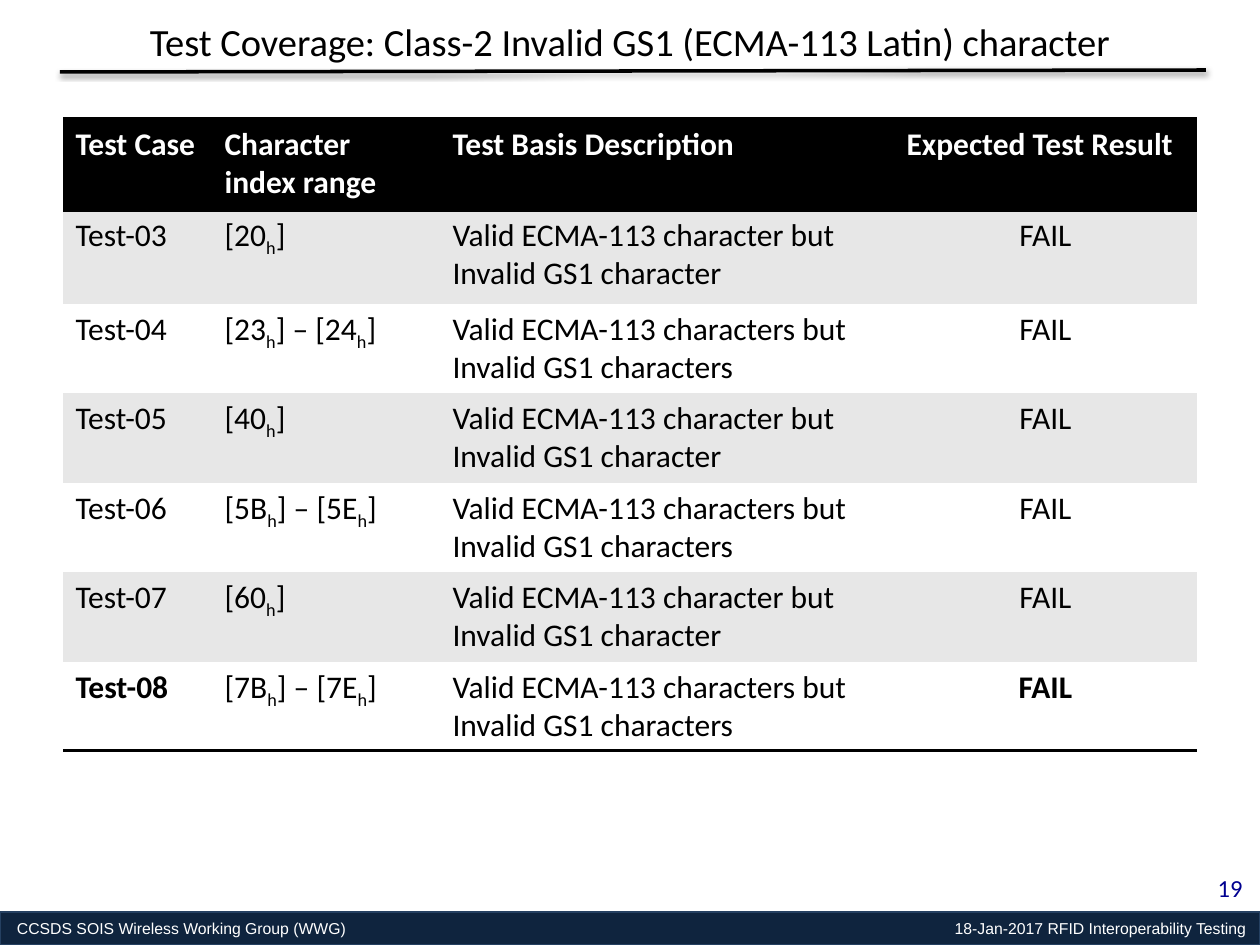
from lxml import etree
from pptx import Presentation, util as u
from pptx.dml.color import RGBColor
from pptx.enum import shapes, text
from pptx.oxml import parse_xml
from pptx.oxml.ns import nsdecls, qn

PX = 914400 / 126
C = {"black": "000000", "white": "FFFFFF", "band": "E7E7E7",
     "navy": "0F243E", "edge": "254061", "number": "000090"}


def px(*values):
    return [u.Emu(round(v * PX)) for v in values]


def style(p, size, color, font="Calibri", bold=False):
    for r in p.runs:
        r.font.size = u.Pt(size)
        r.font.name = font
        r.font.bold = bold
        r.font.color.rgb = RGBColor.from_string(C[color])


prs = Presentation()
prs.slide_width, prs.slide_height = px(1260, 945)
s = prs.slides.add_slide(prs.slide_layouts[5])

sp = s.shapes.add_shape(shapes.MSO_SHAPE.RECTANGLE, *px(0, 912, 1260, 33))
sp.shadow.inherit = False
sp.fill.solid()
sp.fill.fore_color.rgb = RGBColor.from_string(C["navy"])
sp.line.color.rgb = RGBColor.from_string(C["edge"])
sp.line.width = u.Pt(0.75)
tf = sp.text_frame
tf.margin_left, tf.margin_right, tf.margin_top, tf.margin_bottom = px(17, 12, 6, 6)
tf.vertical_anchor = text.MSO_ANCHOR.MIDDLE
p = tf.paragraphs[0]
p.text = "CCSDS SOIS Wireless Working Group (WWG)\t18-Jan-2017 RFID Interoperability Testing"
p.alignment = text.PP_ALIGN.LEFT
style(p, 9, "white", "Arial")
tabs = etree.SubElement(p._p.get_or_add_pPr(), qn("a:tabLst"))
etree.SubElement(tabs, qn("a:tab"), pos=str(px(1229)[0]), algn="r")

sp = s.shapes.add_textbox(*px(1172, 867, 83, 44))
tf = sp.text_frame
tf.word_wrap = True
p = tf.paragraphs[0]
p.text = "19"
p.alignment = text.PP_ALIGN.RIGHT
style(p, 14, "number")

sp = s.shapes.title
sp.left, sp.top, sp.width, sp.height = px(63, 10, 1134, 64)
sp.height = px(57)[0]
tf = sp.text_frame
tf.text = "Test Coverage: Class-2 Invalid GS1 (ECMA-113 Latin) character"
tf.auto_size = text.MSO_AUTO_SIZE.NONE
tf.vertical_anchor = text.MSO_ANCHOR.MIDDLE
p = tf.paragraphs[0]
p.alignment = text.PP_ALIGN.CENTER
style(p, 22, "black")
sp.top, sp.height = px(13, 57)

single = "Valid ECMA-113 character but Invalid GS1 character"
plural = "Valid ECMA-113 characters but Invalid GS1 characters"
ranges = [["20"], ["23", "24"], ["40"], ["5B", "5E"], ["60"], ["7B", "7E"]]
rows = [["Test Case", "Character index range", "Test Basis Description", "Expected Test Result"]]
for i, codes in enumerate(ranges, 3):
    index = " – ".join(f"[{code}h]" for code in codes)
    rows.append([f"Test-{i:02d}", index, plural if len(codes) > 1 else single, "FAIL"])

last = len(rows) - 1
frame = s.shapes.add_table(len(rows), 4, *px(63, 119, 1134, 632))
table = frame.table
table.first_row = table.horz_banding = False
table._tbl.tblPr.find(qn("a:tableStyleId")).text = "{2D5ABB26-0587-4C30-8999-92F81FD0307C}"
for col, width in zip(table.columns, px(149, 228, 454, 303)):
    col.width = width
for row, height in zip(table.rows, px(91, 94, 89, 90, 89, 90, 89)):
    row.height = height

for i, values in enumerate(rows):
    for j, value in enumerate(values):
        cell = table.cell(i, j)
        p = cell.text_frame.paragraphs[0]
        if i and j == 1:
            for k, part in enumerate(value.split("h")):
                if k:
                    r = p.add_run()
                    r.text = "h"
                    r._r.get_or_add_rPr().set("baseline", "-25000")
                r = p.add_run()
                r.text = part
        else:
            p.text = value
        if i and j == 3:
            p.alignment = text.PP_ALIGN.CENTER
        style(p, 18, "black" if i else "white", bold=i == 0 or (i == last and j in (0, 3)))
        sides = {0: ["lnT", "lnB"], last: ["lnB"]}.get(i, [])
        for side in sides:
            cell._tc.get_or_add_tcPr().append(parse_xml(
                f'<a:{side} {nsdecls("a")} w="25400"><a:solidFill>'
                f'<a:srgbClr val="{C["black"]}"/></a:solidFill></a:{side}>'))
        cell.fill.solid()
        fill = "black" if i == 0 else "band" if i % 2 else "white"
        cell.fill.fore_color.rgb = RGBColor.from_string(C[fill])

line = s.shapes.add_connector(shapes.MSO_CONNECTOR.STRAIGHT, *px(60, 72, 1206, 70))
line.line.color.rgb = RGBColor.from_string(C["black"])
line.line.width = u.Pt(2)
line._element.spPr.append(parse_xml(
    f'<a:effectLst {nsdecls("a")}><a:outerShdw blurRad="39370" dist="20320" dir="5400000" '
    f'rotWithShape="0"><a:srgbClr val="{C["black"]}"><a:alpha val="38000"/></a:srgbClr>'
    '</a:outerShdw></a:effectLst>'))

prs.save("out.pptx")
